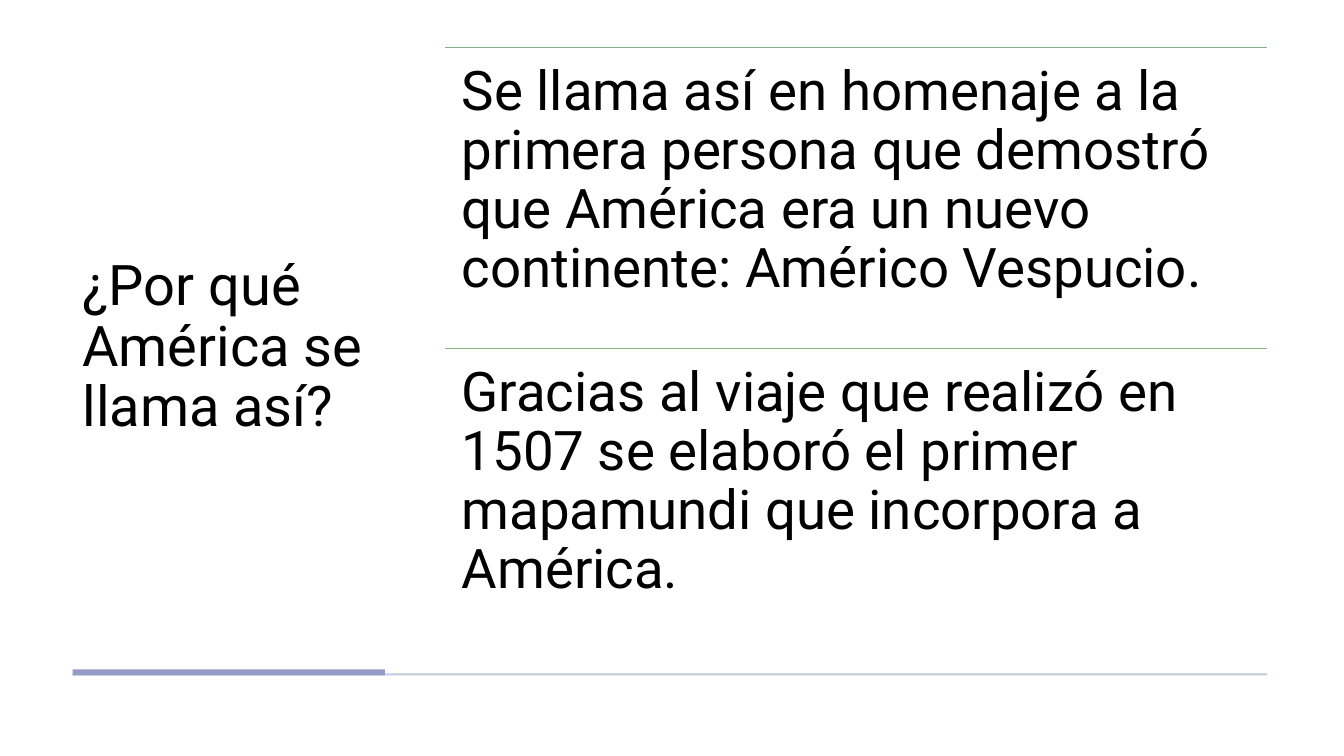
from dataclasses import dataclass

from lxml import etree
from pptx import Presentation
from pptx import slide as sl
from pptx import util as u
from pptx.dml import color
from pptx.enum import shapes, text
from pptx.oxml import ns


@dataclass(frozen=True)
class Theme:
    font: str = "Roboto"
    ink: str = "000000"
    paper: str = "FFFFFF"
    rule: str = "BDCCDB"
    accent: str = "969CC6"
    title: float = 40
    body: float = 39


@dataclass(frozen=True)
class Box:
    left: float
    top: float
    width: float
    height: float

    def pts(self) -> list[u.Length]:
        return [u.Pt(v) for v in (self.left, self.top, self.width, self.height)]


@dataclass(frozen=True)
class Item:
    words: str
    tint: str


THEME = Theme()
TITLE = Box(51.84, 33.84, 223.2, 429.84)
LIST = Box(318.24, 33.84, 586.8, 429.84)
RULE = Box(51.84, 480.96, 853.2, 1.44)
ACCENT = Box(51.84, 478.08, 223.2, 4.32)
ITEMS = [
    Item("Se llama así en homenaje a la primera persona que demostró "
         "que América era un nuevo continente: Américo Vespucio.", "84AE8D"),
    Item("Gracias al viaje que realizó en 1507 se elaboró el primer "
         "mapamundi que incorpora a América.", "83B078"),
]


def rgb(tint: str) -> color.RGBColor:
    return color.RGBColor.from_string(tint)


def write(page: sl.Slide, words: str, box: Box, *, size: float,
          side: float = 7.2, edge: float = 3.6,
          anchor: text.MSO_ANCHOR = text.MSO_ANCHOR.TOP) -> None:
    frame = page.shapes.add_textbox(*box.pts()).text_frame
    frame.word_wrap = True
    frame.auto_size = text.MSO_AUTO_SIZE.NONE
    frame.vertical_anchor = anchor
    frame.margin_left = frame.margin_right = u.Pt(side)
    frame.margin_top = frame.margin_bottom = u.Pt(edge)
    para = frame.paragraphs[0]
    para.alignment = text.PP_ALIGN.LEFT
    para.line_spacing = 0.9
    run = para.add_run()
    run.text = words
    run.font.name = THEME.font
    run.font.size = u.Pt(size)
    run.font.color.rgb = rgb(THEME.ink)


def bar(page: sl.Slide, box: Box, tint: str) -> None:
    shape = page.shapes.add_shape(shapes.MSO_SHAPE.RECTANGLE, *box.pts())
    shape.shadow.inherit = False
    shape.fill.solid()
    shape.fill.fore_color.rgb = rgb(tint)
    shape.line.fill.background()


def line(page: sl.Slide, box: Box, tint: str) -> None:
    left, top, width, _ = box.pts()
    link = page.shapes.add_connector(
        shapes.MSO_CONNECTOR.STRAIGHT, left, top, left + width, top)
    link.line.color.rgb = rgb(tint)
    link.line.width = u.Pt(1)
    etree.SubElement(link.element.spPr, ns.qn("a:effectLst"))


def main() -> None:
    deck = Presentation()
    deck.slide_width, deck.slide_height = u.Pt(960), u.Pt(540)
    page = deck.slides.add_slide(deck.slide_layouts[6])
    page.background.fill.solid()
    page.background.fill.fore_color.rgb = rgb(THEME.paper)

    write(page, "¿Por qué América se llama así?", TITLE,
          size=THEME.title, anchor=text.MSO_ANCHOR.MIDDLE)
    bar(page, RULE, THEME.rule)
    bar(page, ACCENT, THEME.accent)

    step = LIST.height / len(ITEMS)
    for row, item in enumerate(ITEMS):
        box = Box(LIST.left, LIST.top + row * step, LIST.width, step)
        line(page, box, item.tint)
        write(page, item.words, box, size=THEME.body, side=11.52, edge=11.52)

    deck.save("out.pptx")


if __name__ == "__main__":
    main()
